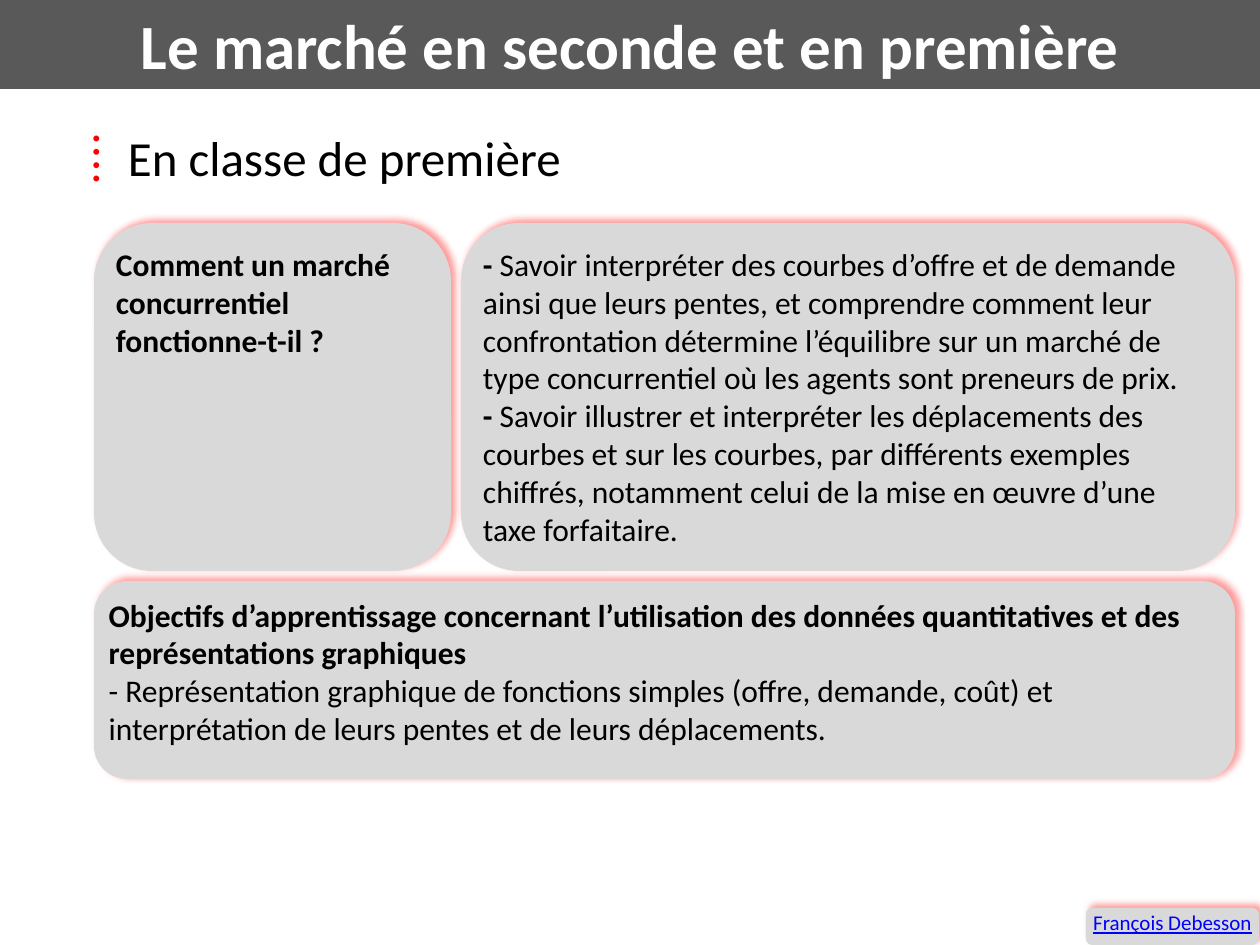
from lxml import etree
from pptx import Presentation
from pptx import util as u
from pptx.dml.color import RGBColor
from pptx.enum import shapes, text
from pptx.oxml import ns

PX_PER_INCH = 126
WHITE = RGBColor(0xFF, 0xFF, 0xFF)
BLACK = RGBColor(0, 0, 0)
DARK_GREY = RGBColor(0x59, 0x59, 0x59)
LIGHT_GREY = RGBColor(0xD9, 0xD9, 0xD9)
RED = RGBColor(0xFF, 0, 0)
BLUE = RGBColor(0, 0, 0xFF)

TITLE = dict(size=u.Pt(36), bold=True)
HEADING = dict(size=u.Pt(28))
BOLD = dict(size=u.Pt(18), bold=True)
PLAIN = dict(size=u.Pt(18), bold=False)
CREDIT = dict(size=u.Pt(12), underline=True)


def px(length):
    """Turn pixels into EMU."""
    return u.Inches(length / PX_PER_INCH)


def add_child(parent, tag, **attributes):
    """Append a DrawingML element with the given attributes."""
    return etree.SubElement(parent, ns.qn(tag), attributes)


def write_text(shape, paragraphs, color=BLACK, align=text.PP_ALIGN.LEFT,
               anchor=text.MSO_ANCHOR.TOP, inset=5):
    """Fill a shape with paragraphs made of (words, format) spans."""
    frame = shape.text_frame
    settings = dict(word_wrap=True, auto_size=text.MSO_AUTO_SIZE.NONE, vertical_anchor=anchor)
    for side in ("left", "right", "top", "bottom"):
        settings[f"margin_{side}"] = px(inset)
    for name, value in settings.items():
        setattr(frame, name, value)
    for index, spans in enumerate(paragraphs):
        para = frame.add_paragraph() if index else frame.paragraphs[0]
        para.alignment = align
        for words, style in spans:
            span = para.add_run()
            span.text = words
            for name, value in dict(style, name="Calibri").items():
                setattr(span.font, name, value)
            span.font.color.rgb = color
    return frame


def add_title(page, box, words):
    """Place the title as a dark band."""
    title = page.shapes.title
    title.left, title.top, title.width, title.height = map(px, box)
    title.fill.solid()
    title.fill.fore_color.rgb = DARK_GREY
    write_text(title, [[(words, TITLE)]], WHITE, text.PP_ALIGN.CENTER, text.MSO_ANCHOR.MIDDLE)


def add_heading(page, box, words):
    """Place a heading with a red bullet."""
    heading = page.shapes.add_textbox(*map(px, box))
    frame = write_text(heading, [[(words, HEADING)]], align=text.PP_ALIGN.JUSTIFY)
    para = frame.paragraphs[0]
    para.line_spacing = 0.8
    para.space_before = u.Pt(5.6)
    properties = para._p.get_or_add_pPr()
    properties.set("marL", str(px(49)))
    properties.set("indent", str(px(-38)))
    add_child(add_child(properties, "a:buClr"), "a:srgbClr", val=str(RED))
    add_child(properties, "a:buFont", typeface="Calibri")
    add_child(properties, "a:buChar", char="⁞")


def add_card(page, box, paragraphs, **layout):
    """Place a rounded grey card with a red glow towards the top right."""
    card = page.shapes.add_shape(shapes.MSO_SHAPE.ROUNDED_RECTANGLE, *map(px, box))
    card.fill.solid()
    card.fill.fore_color.rgb = LIGHT_GREY
    card.line.fill.background()
    card.shadow.inherit = False
    effects = card._element.spPr.find(ns.qn("a:effectLst"))
    shadow = add_child(effects, "a:outerShdw", blurRad=str(u.Pt(4)), dist=str(u.Pt(3)),
                       dir=str(315 * 60000), algn="bl", rotWithShape="0")
    add_child(add_child(shadow, "a:srgbClr", val=str(RED)), "a:alpha", val="40000")
    write_text(card, paragraphs, **layout)


def add_programme(page, box):
    """Place the question, its learning goals and the wide card below them."""
    left, top, width, height = box
    gap, question_width, upper_height = 10, 357, 348
    goals_left = left + question_width + gap
    lower_top = top + upper_height + gap
    add_card(page, (left, top, question_width, upper_height),
             [[("Comment un marché concurrentiel fonctionne-t-il ?", BOLD)]])
    goals = (
        "Savoir interpréter des courbes d’offre et de demande ainsi que leurs pentes, "
        "et comprendre comment leur confrontation détermine l’équilibre sur un marché "
        "de type concurrentiel où les agents sont preneurs de prix.",
        "Savoir illustrer et interpréter les déplacements des courbes et sur les courbes, "
        "par différents exemples chiffrés, notamment celui de la mise en œuvre d’une "
        "taxe forfaitaire.",
    )
    add_card(page, (goals_left, top, left + width - goals_left, upper_height),
             [[("- ", BOLD), (goal, PLAIN)] for goal in goals])
    add_card(page, (left, lower_top, width, top + height - lower_top), [
        [("Objectifs d’apprentissage concernant l’utilisation des données quantitatives "
          "et des représentations graphiques", BOLD)],
        [("- Représentation graphique de fonctions simples (offre, demande, coût) et "
          "interprétation de leurs pentes et de leurs déplacements.", PLAIN)],
    ])


def main():
    """Build and save the deck."""
    deck = Presentation()
    deck.slide_width, deck.slide_height = px(1260), px(945)
    page = deck.slides.add_slide(deck.slide_layouts[5])
    add_title(page, (0, 0, 1260, 89), "Le marché en seconde et en première")
    add_heading(page, (74, 134, 1111, 59), "En classe de première")
    add_programme(page, (94, 223, 1141, 556))
    add_card(page, (1086, 908, 173, 37), [[("François Debesson", CREDIT)]],
             color=BLUE, align=text.PP_ALIGN.CENTER, inset=0)
    deck.save("out.pptx")


if __name__ == "__main__":
    main()
